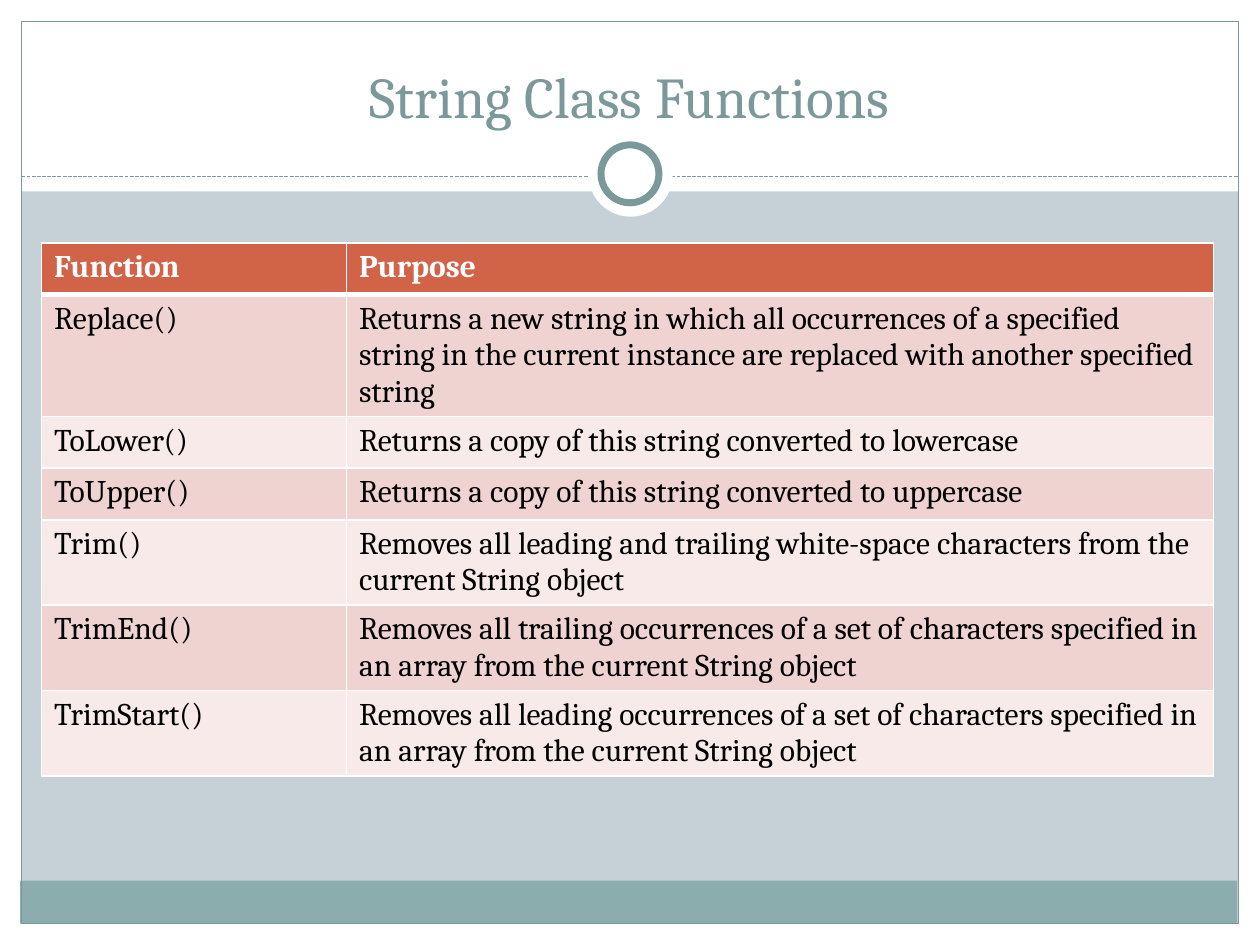
"""Build the String Class Functions slide with its reference table."""
from lxml.etree import SubElement
from pptx import Presentation
from pptx.dml.color import RGBColor
from pptx.enum.dml import MSO_LINE
from pptx.enum.shapes import MSO_CONNECTOR, MSO_SHAPE
from pptx.enum.text import MSO_ANCHOR, PP_ALIGN
from pptx.oxml.ns import qn
from pptx.util import Inches, Pt

WHITE = RGBColor(0xFF, 0xFF, 0xFF)
BLACK = RGBColor(0x00, 0x00, 0x00)
BACKDROP = RGBColor(0xC5, 0xD1, 0xD7)
TEAL = RGBColor(0x8C, 0xAD, 0xAE)
DARK_TEAL = RGBColor(0x7C, 0x99, 0x9A)
HEADER = RGBColor(0xD1, 0x63, 0x49)
BANDS = [RGBColor(0xF7, 0xEA, 0xE9), RGBColor(0xEE, 0xD3, 0xD0)]
FONT = "Cambria"

FUNCTIONS = [
    ("Function", "Purpose"),
    ("Replace()", "Returns a new string in which all occurrences of a specified string "
                  "in the current instance are replaced with another specified string"),
    ("ToLower()", "Returns a copy of this string converted to lowercase"),
    ("ToUpper()", "Returns a copy of this string converted to uppercase"),
    ("Trim()", "Removes all leading and trailing white-space characters "
               "from the current String object"),
    ("TrimEnd()", "Removes all trailing occurrences of a set of characters "
                  "specified in an array from the current String object"),
    ("TrimStart()", "Removes all leading occurrences of a set of characters "
                    "specified in an array from the current String object"),
]


def add_run(paragraph, text, size, color, bold=False):
    run = paragraph.add_run()
    run.text = text
    run.font.name = FONT
    run.font.size = Pt(size)
    run.font.bold = bold
    run.font.color.rgb = color


def add_border(cell, side, width):
    border = SubElement(cell._tc.get_or_add_tcPr(), qn(f"a:{side}"), w=str(Pt(width)))
    fill = SubElement(border, qn("a:solidFill"))
    SubElement(fill, qn("a:srgbClr"), val=str(WHITE))


prs = Presentation()
prs.slide_width = Inches(10)
prs.slide_height = Inches(7.5)
slide = prs.slides.add_slide(prs.slide_layouts[5])
slide.background.fill.solid()
slide.background.fill.fore_color.rgb = BACKDROP
shapes = slide.shapes

RECT, OVAL = MSO_SHAPE.RECTANGLE, MSO_SHAPE.OVAL
decorations = [
    (RECT, 0, 7.33, 10, 0.17, WHITE, None),
    (RECT, 0, 0, 10, 1.52, WHITE, None),
    (RECT, 0, 0, 0.17, 7.5, WHITE, None),
    (RECT, 9.83, 0, 0.17, 7.5, WHITE, None),
    (RECT, 0.16, 6.99, 9.66, 0.34, TEAL, None),
    (RECT, 0.17, 0.17, 9.66, 7.16, None, 0.75),
    ("divider", 0.17, 1.4, 9.66, 0, None, 0.75),
    (OVAL, 4.67, 1.05, 0.67, 0.67, WHITE, None),
    (OVAL, 4.77, 1.15, 0.46, 0.46, WHITE, 4),
]
for kind, left, top, width, height, fill, line_width in decorations:
    if kind == "divider":
        part = shapes.add_connector(MSO_CONNECTOR.STRAIGHT, Inches(left), Inches(top),
                                    Inches(left + width), Inches(top))
        part.line.dash_style = MSO_LINE.SQUARE_DOT
        SubElement(part._element.spPr, qn("a:effectLst"))
    else:
        part = shapes.add_shape(kind, Inches(left), Inches(top), Inches(width), Inches(height))
        part.shadow.inherit = False
        if fill is None:
            part.fill.background()
        else:
            part.fill.solid()
            part.fill.fore_color.rgb = fill
    if line_width is None:
        part.line.fill.background()
    else:
        part.line.color.rgb = DARK_TEAL
        part.line.width = Pt(line_width)

title = shapes.title
title.left, title.top = Inches(0.33), Inches(0.25)
title.width, title.height = Inches(9.33), Inches(0.83)
title.text_frame.vertical_anchor = MSO_ANCHOR.BOTTOM
heading = title.text_frame.paragraphs[0]
heading.alignment = PP_ALIGN.CENTER
add_run(heading, "String Class Functions", 33, DARK_TEAL)
shapes._spTree.append(title._element)

ROW_HEIGHT = 0.41
table = shapes.add_table(len(FUNCTIONS), 2, Inches(0.33), Inches(1.93), Inches(9.3),
                         Inches(ROW_HEIGHT * len(FUNCTIONS))).table
table.horz_banding = False
table.columns[0].width = Inches(2.42)
table.columns[1].width = Inches(6.88)

for row, texts in enumerate(FUNCTIONS):
    is_header = row == 0
    for column, text in enumerate(texts):
        cell = table.cell(row, column)
        add_run(cell.text_frame.paragraphs[0], text, 18,
                WHITE if is_header else BLACK, is_header)
        for side in ("lnL", "lnR", "lnT", "lnB"):
            under_header = (row, side) in [(0, "lnB"), (1, "lnT")]
            add_border(cell, side, 3 if under_header else 1)
        cell.fill.solid()
        cell.fill.fore_color.rgb = HEADER if is_header else BANDS[row % 2]

prs.save("out.pptx")
